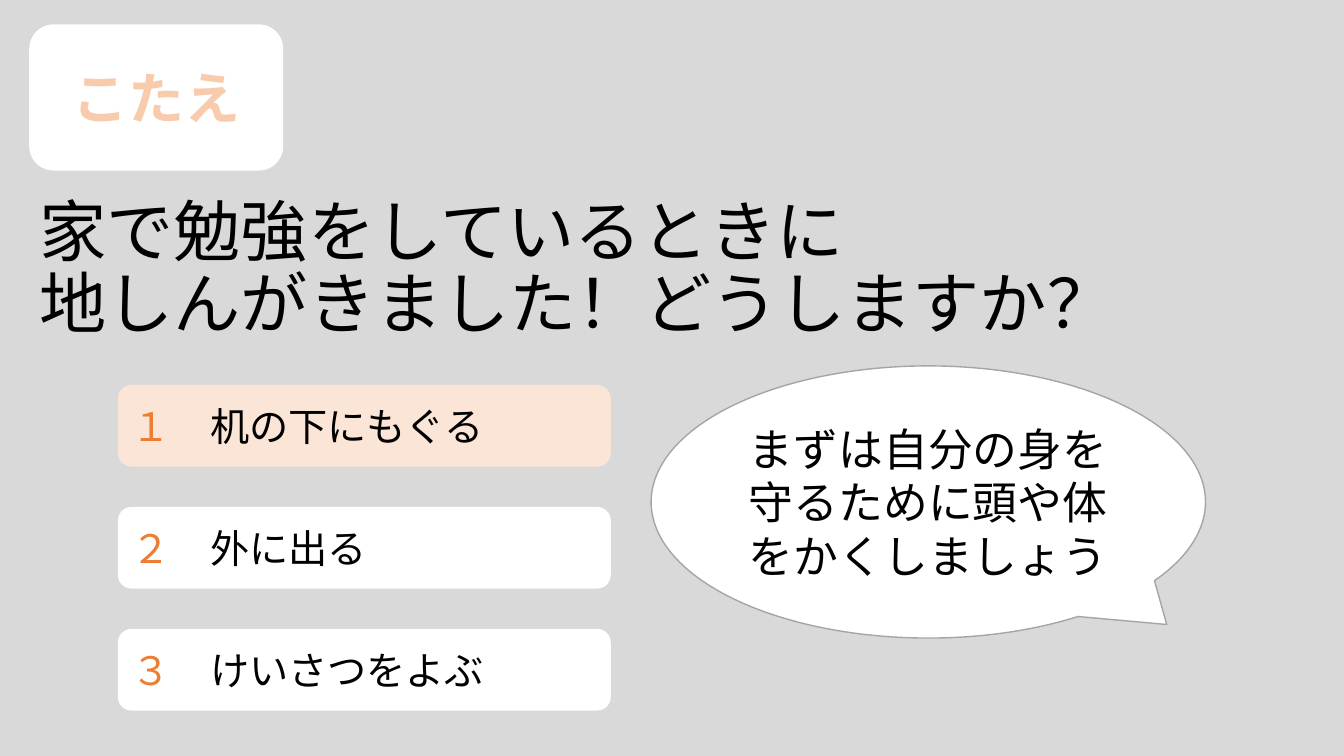
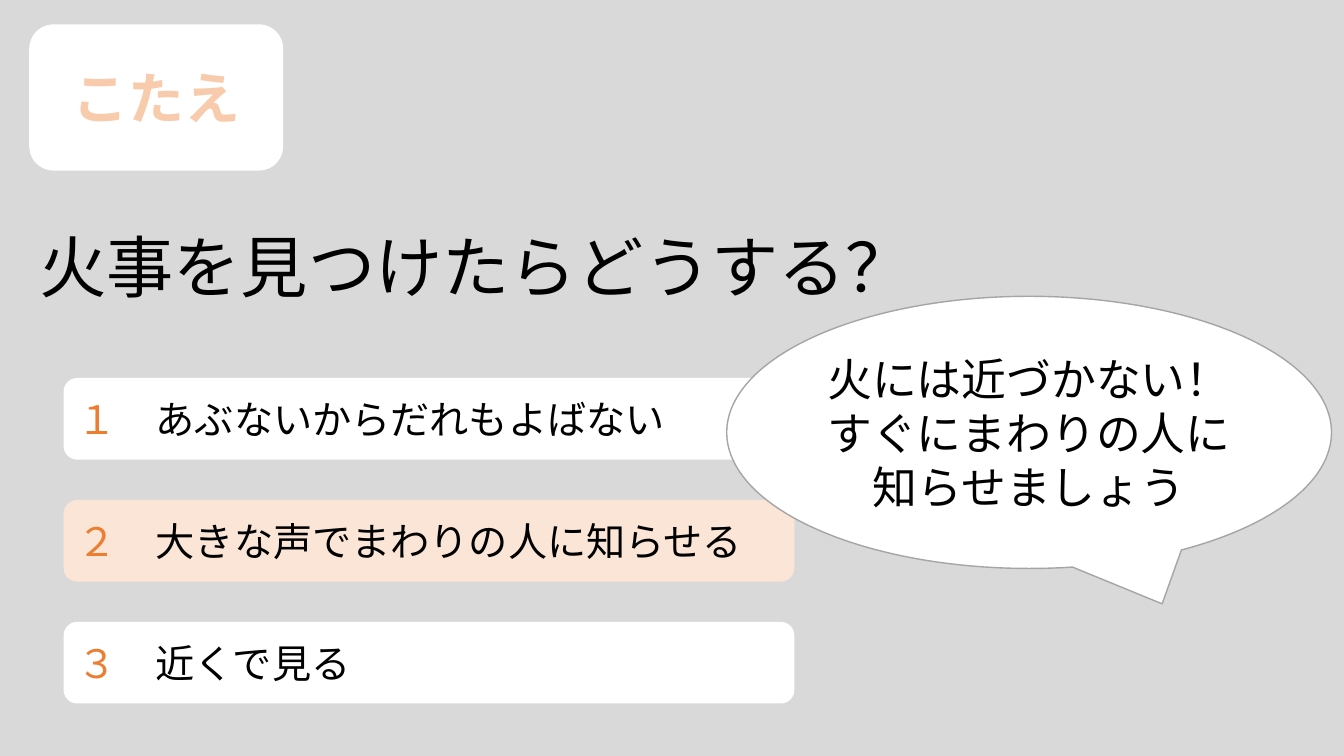
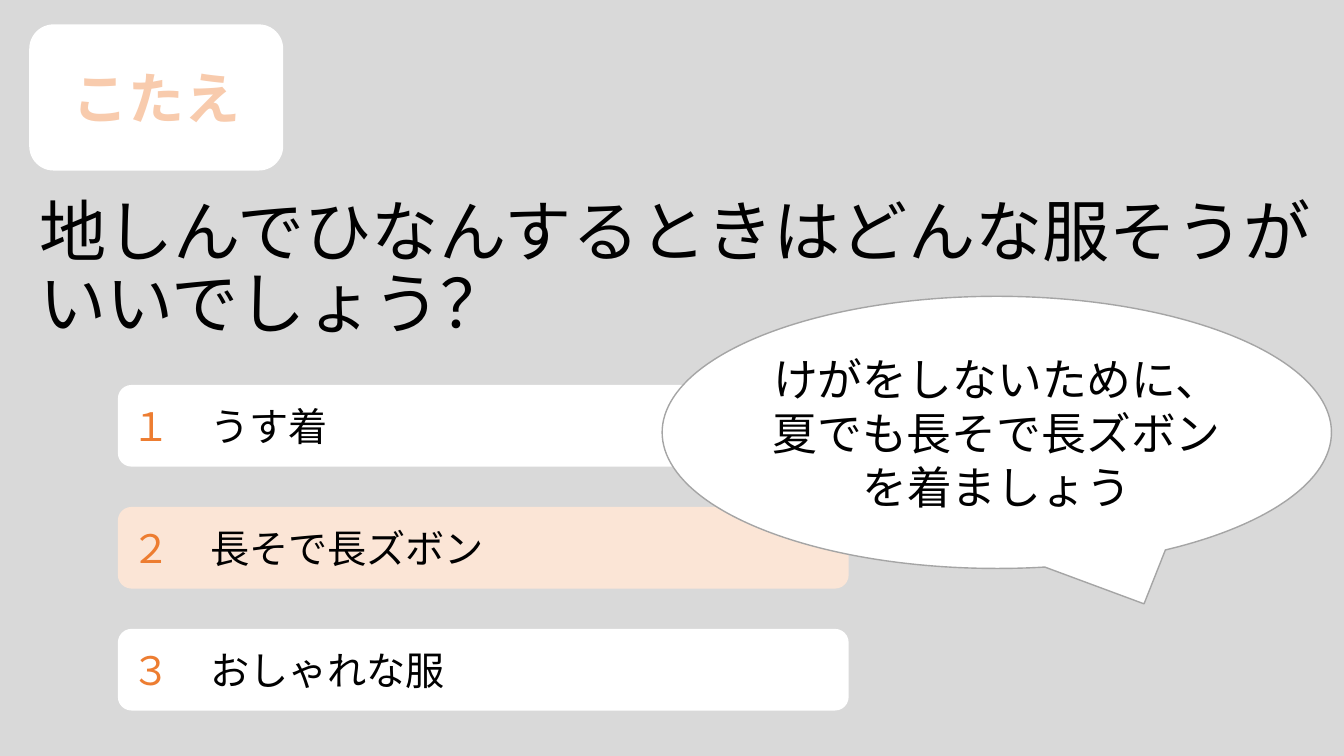
from lxml import etree
from pptx import Presentation
from pptx import util as u
from pptx.dml import color
from pptx.enum import shapes, text
from pptx.oxml import ns

FONT = "Noto Sans CJK JP"
HUES = {
    "back": "D9D9D9",
    "card": "FFFFFF",
    "right": "FBE5D6",
    "peach": "F8CBAD",
    "orange": "ED7D31",
    "rim": "A5A5A5",
    "ink": "000000",
}
SLIDES = [
    {
        "ask": ["家で勉強をしているときに", "地しんがきました！どうしますか？"],
        "picks": ["机の下にもぐる", "外に出る", "けいさつをよぶ"],
        "right": 0,
        "list": (84.2, 275, 352.1),
        "tip": ["まずは自分の身を守るために頭や体をかくしましょう"],
        "call": (465.1, 261.4, 396),
        "tail": (0.43, 0.45),
    },
    {
        "ask": ["火事を見つけたらどうする？"],
        "picks": ["あぶないからだれもよばない", "大きな声でまわりの人に知らせる", "近くで見る"],
        "right": 1,
        "list": (45.4, 270, 522),
        "tip": ["火には近づかない！", "すぐにまわりの人に知らせましょう"],
        "call": (519.1, 211.7, 432),
        "tail": (0.22, 0.63),
    },
    {
        "ask": ["地しんでひなんするときはどんな服そうがいいでしょう？"],
        "picks": ["うす着", "長そで長ズボン", "おしゃれな服"],
        "right": 1,
        "list": (84.2, 275, 522),
        "tip": ["けがをしないために、夏でも長そで長ズボンを着ましょう"],
        "call": (473, 211.7, 478.1),
        "tail": (0.22, 0.63),
    },
]


def write(par, words, size, hue, edge=0, bold=False):
    run = par.add_run()
    run.text = words
    font = run.font
    font.name = FONT
    font.size = u.Pt(size)
    font.bold = bold
    font.color.rgb = color.RGBColor.from_string(HUES[hue])
    props = font._element
    latin = props.find(ns.qn("a:latin"))
    east = etree.Element(ns.qn("a:ea"), typeface=FONT)
    latin.addnext(east)
    if edge:
        line = etree.Element(ns.qn("a:ln"), w=str(u.Pt(edge)))
        fill = etree.SubElement(line, ns.qn("a:solidFill"))
        etree.SubElement(fill, ns.qn("a:srgbClr"), val=HUES["orange"])
        props.insert(0, line)


def draw(page, kind, left, top, wide, high, hue):
    box = page.shapes.add_shape(kind, u.Pt(left), u.Pt(top), u.Pt(wide), u.Pt(high))
    box.shadow.inherit = False
    box.fill.solid()
    box.fill.fore_color.rgb = color.RGBColor.from_string(HUES[hue])
    box.line.fill.background()
    box.text_frame.word_wrap = True
    box.text_frame.vertical_anchor = text.MSO_ANCHOR.MIDDLE
    return box


deck = Presentation()
deck.slide_width = u.Pt(960)
deck.slide_height = u.Pt(540)

back = deck.slide_master.background.fill
back.solid()
back.fore_color.rgb = color.RGBColor.from_string(HUES["back"])

plan = deck.slide_layouts[5]
head = plan.placeholders[0]
head.left, head.top = u.Pt(20.9), u.Pt(141.1)
head.width, head.height = u.Pt(933.1), u.Pt(104.4)
head.text_frame.auto_size = text.MSO_AUTO_SIZE.NONE
head.text_frame.vertical_anchor = text.MSO_ANCHOR.MIDDLE

round_box = shapes.MSO_SHAPE.ROUNDED_RECTANGLE
for item in SLIDES:
    page = deck.slides.add_slide(plan)

    par = page.shapes.title.text_frame.paragraphs[0]
    par.alignment = text.PP_ALIGN.LEFT
    par.line_spacing = 0.9
    for row, words in enumerate(item["ask"]):
        if row:
            par.add_line_break()
        write(par, words, 48, "ink")

    tag = draw(page, round_box, 20.9, 17.4, 181.4, 104.4, "card")
    par = tag.text_frame.paragraphs[0]
    par.alignment = text.PP_ALIGN.CENTER
    write(par, "こたえ", 40, "peach", 1.75, True)

    left, top, wide = item["list"]
    for row, (mark, words) in enumerate(zip("１２３", item["picks"])):
        hue = "right" if row == item["right"] else "card"
        pick = draw(page, round_box, left, top + row * 87.1, wide, 58.3, hue)
        par = pick.text_frame.paragraphs[0]
        par.alignment = text.PP_ALIGN.LEFT
        write(par, mark + "　", 28, "orange", 0.75)
        write(par, words, 28, "ink")

    call = draw(page, shapes.MSO_SHAPE.OVAL_CALLOUT, *item["call"], 194.4, "card")
    call.line.color.rgb = color.RGBColor.from_string(HUES["rim"])
    call.line.width = u.Pt(1)
    call.adjustments[0], call.adjustments[1] = item["tail"]
    frame = call.text_frame
    for row, words in enumerate(item["tip"]):
        par = frame.add_paragraph() if row else frame.paragraphs[0]
        par.alignment = text.PP_ALIGN.CENTER
        write(par, words, 32, "ink")

deck.save("out.pptx")
